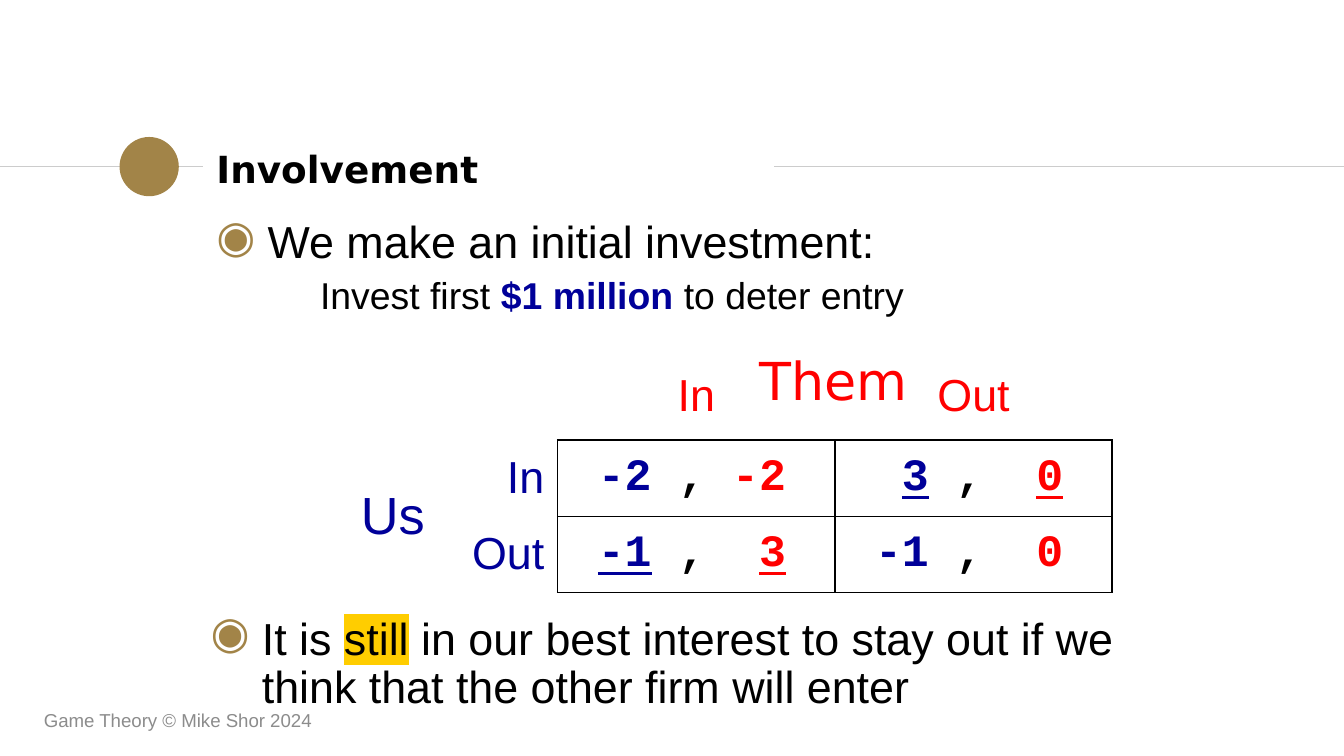
from lxml.etree import SubElement
from pptx import Presentation
from pptx.dml.color import RGBColor as RGB
from pptx.enum.shapes import MSO_CONNECTOR as Connector, MSO_SHAPE as Shape
from pptx.enum.text import MSO_ANCHOR as Anchor, PP_ALIGN as Align
from pptx.oxml.ns import qn
from pptx.util import Cm, Pt

COLORS = {"ink": "000000", "us": "000099", "them": "FF0000", "gold": "A28448",
          "rule": "CCCCCC", "footer": "8C8C8C", "marker": "FFCD00"}

TEXT = {"size": Pt(24), "name": "Arial"}
DETAIL = {"size": Pt(20), "name": "Arial"}
HEADING = {"size": Pt(20), "name": "DejaVu Sans", "bold": True}
PLAYER = {"size": Pt(28), "name": "DejaVu Sans"}
ROW_PLAYER = {"size": Pt(28), "name": "Arial"}
FOOTER = {"size": Pt(10), "name": "Arial"}
PAYOFF = {"size": Pt(24), "name": "Courier New", "bold": True}

BULLET = {"line_spacing": 0.9}
SUBPOINT = {"line_spacing": 0.9, "space_before": Pt(4.8)}
CENTERED = {"alignment": Align.CENTER}
RIGHT = {"alignment": Align.RIGHT}

TITLE = [("Involvement", "ink", HEADING)]
OPENING = [("We make an initial investment:", "ink", TEXT)]
INVESTMENT = [("Invest first ", "ink", DETAIL),
              ("$1 million ", "us", DETAIL | {"bold": True}),
              ("to deter entry", "ink", DETAIL)]
CONCLUSION = [("It is ", "ink", TEXT),
              ("still", "ink", TEXT, "marker"),
              (" in our best interest to stay out if we think that "
               "the other firm will enter", "ink", TEXT)]
COPYRIGHT = [("Game Theory © Mike Shor 2024", "footer", FOOTER)]

MOVES = ["In", "Out"]
PAYOFFS = [[("-2", "-2"), ("3", "0")],
           [("-1", "3"), ("-1", "0")]]
BEST_FOR_US = {(0, 1), (1, 0)}
BEST_FOR_THEM = {(0, 1), (1, 0)}

COLUMN_WIDTHS = [2.41, 2.26, 5.24, 5.24]
ROW_HEIGHT = 1.44
PAYOFF_TABS = [(1.52, "r"), (2.03, "l"), (4.06, "r")]
RULE_Y = 3.15
RULES = [(0, 3.84), (14.63, 25.4)]
DOT = 1.12


def write(paragraph, runs, layout):
    for key, value in layout.items():
        setattr(paragraph, key, value)
    for text, color, style, *highlight in runs:
        run = paragraph.add_run()
        run.text = text
        run.font.color.rgb = RGB.from_string(COLORS[color])
        for key, value in style.items():
            setattr(run.font, key, value)
        for name in highlight:
            properties = run._r.get_or_add_rPr()
            mark = SubElement(properties, qn("a:highlight"))
            SubElement(mark, qn("a:srgbClr"), val=COLORS[name])
            properties.find(qn("a:latin")).addprevious(mark)


def indent(paragraph, margin, first=0):
    properties = paragraph._p.get_or_add_pPr()
    properties.set("marL", str(Cm(margin)))
    properties.set("indent", str(Cm(first)))
    return properties


def add_bullet(paragraph):
    properties = indent(paragraph, 0.97, -0.97)
    color = SubElement(properties, qn("a:buClr"))
    SubElement(color, qn("a:srgbClr"), val=COLORS["gold"])
    SubElement(properties, qn("a:buChar"), char="◉")


def add_tabs(paragraph):
    tabs = SubElement(paragraph._p.get_or_add_pPr(), qn("a:tabLst"))
    for position, side in PAYOFF_TABS:
        SubElement(tabs, qn("a:tab"), pos=str(Cm(position)), algn=side)


def add_text(slide, box, runs, layout, anchor=Anchor.TOP, inset=0.25):
    frame = slide.shapes.add_textbox(*map(Cm, box)).text_frame
    frame.word_wrap = True
    frame.vertical_anchor = anchor
    frame.margin_top = frame.margin_bottom = Cm(inset)
    write(frame.paragraphs[0], runs, layout)
    return frame


def add_rules(slide):
    for start, end in RULES:
        rule = slide.shapes.add_connector(
            Connector.STRAIGHT, Cm(start), Cm(RULE_Y), Cm(end), Cm(RULE_Y))
        rule.line.color.rgb = RGB.from_string(COLORS["rule"])
        rule.line.width = Pt(0.75)
        SubElement(rule._element.spPr, qn("a:effectLst"))
    dot = slide.shapes.add_shape(
        Shape.OVAL, Cm(2.26), Cm(RULE_Y - DOT / 2), Cm(DOT), Cm(DOT))
    dot.shadow.inherit = False
    dot.fill.solid()
    dot.fill.fore_color.rgb = RGB.from_string(COLORS["gold"])
    dot.line.fill.background()


def set_borders(cell, row, column):
    drawn = {"L": row > 0 and column > 1, "R": row > 0 and column > 0,
             "T": row > 0 and column > 1, "B": column > 1}
    properties = cell._tc.get_or_add_tcPr()
    for side, visible in drawn.items():
        border = SubElement(properties, qn(f"a:ln{side}"), w=str(Pt(1)))
        if visible:
            fill = SubElement(border, qn("a:solidFill"))
            SubElement(fill, qn("a:srgbClr"), val=COLORS["ink"])
        else:
            SubElement(border, qn("a:noFill"))


def payoff_runs(place):
    ours, theirs = PAYOFFS[place[0]][place[1]]
    return [("\t", "ink", PAYOFF),
            (ours, "us", PAYOFF | {"underline": place in BEST_FOR_US}),
            ("\t,\t", "ink", PAYOFF),
            (theirs, "them", PAYOFF | {"underline": place in BEST_FOR_THEM})]


def add_game(slide):
    rows = len(MOVES) + 1
    table = slide.shapes.add_table(
        rows, len(COLUMN_WIDTHS), Cm(5.87), Cm(6.88),
        Cm(sum(COLUMN_WIDTHS)), Cm(rows * ROW_HEIGHT)).table
    table.first_row = table.horz_banding = False
    for column, width in zip(table.columns, COLUMN_WIDTHS):
        column.width = Cm(width)
    for row in range(rows):
        table.rows[row].height = Cm(ROW_HEIGHT)
        for column in range(len(COLUMN_WIDTHS)):
            cell = table.cell(row, column)
            cell.vertical_anchor = Anchor.MIDDLE if row else Anchor.TOP
            set_borders(cell, row, column)
            cell.fill.background()
            paragraph = cell.text_frame.paragraphs[0]
            if row and column > 1:
                add_tabs(paragraph)
                write(paragraph, payoff_runs((row - 1, column - 2)), {})
            elif column > 1:
                write(paragraph, [(MOVES[column - 2], "them", TEXT)], CENTERED)
            elif row and column == 1:
                write(paragraph, [(MOVES[row - 1], "us", TEXT)], RIGHT)
    us = table.cell(1, 0)
    us.merge(table.cell(2, 0))
    write(us.text_frame.paragraphs[0], [("Us", "us", ROW_PLAYER)], RIGHT)


def main():
    presentation = Presentation()
    presentation.slide_width, presentation.slide_height = Cm(25.4), Cm(14.29)
    slide = presentation.slides.add_slide(presentation.slide_layouts[6])

    add_rules(slide)
    opening = add_text(slide, (3.84, 3.91, 18.92, 3.1), OPENING, BULLET)
    add_bullet(opening.paragraphs[0])
    detail = opening.add_paragraph()
    indent(detail, 1.96)
    write(detail, INVESTMENT, SUBPOINT)
    add_text(slide, (3.84, 2.57, 10.54, 1.22), TITLE, {}, Anchor.MIDDLE)
    add_text(slide, (0.58, 13.23, 8.59, 0.76), COPYRIGHT, {}, Anchor.MIDDLE, 0.13)
    add_text(slide, (12.29, 6.45, 6.93, 1.45),
             [("Them", "them", PLAYER)], CENTERED, inset=0.13)
    add_game(slide)
    conclusion = add_text(slide, (3.73, 11.4, 18.92, 2.36), CONCLUSION, BULLET)
    add_bullet(conclusion.paragraphs[0])

    presentation.save("out.pptx")


if __name__ == "__main__":
    main()
